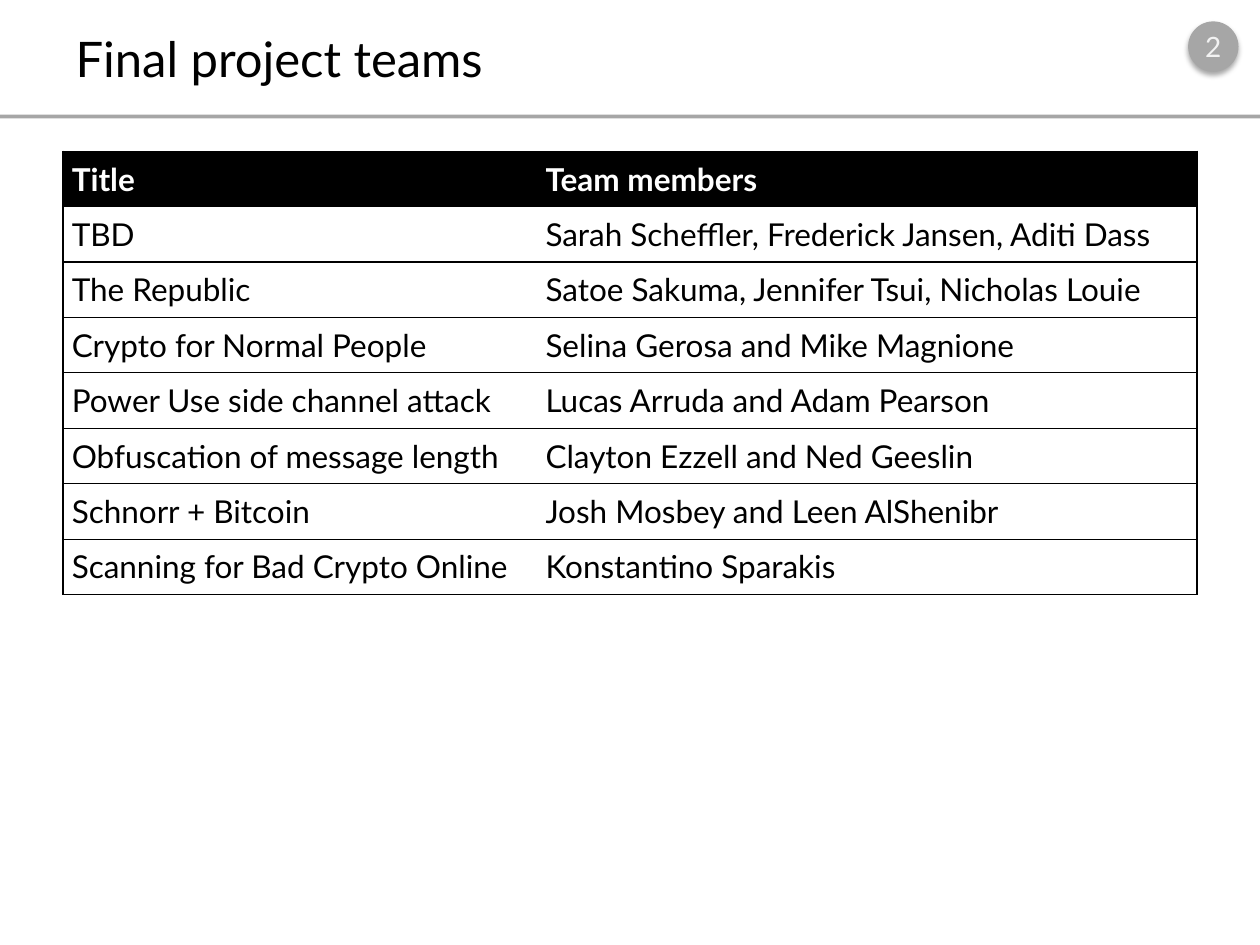
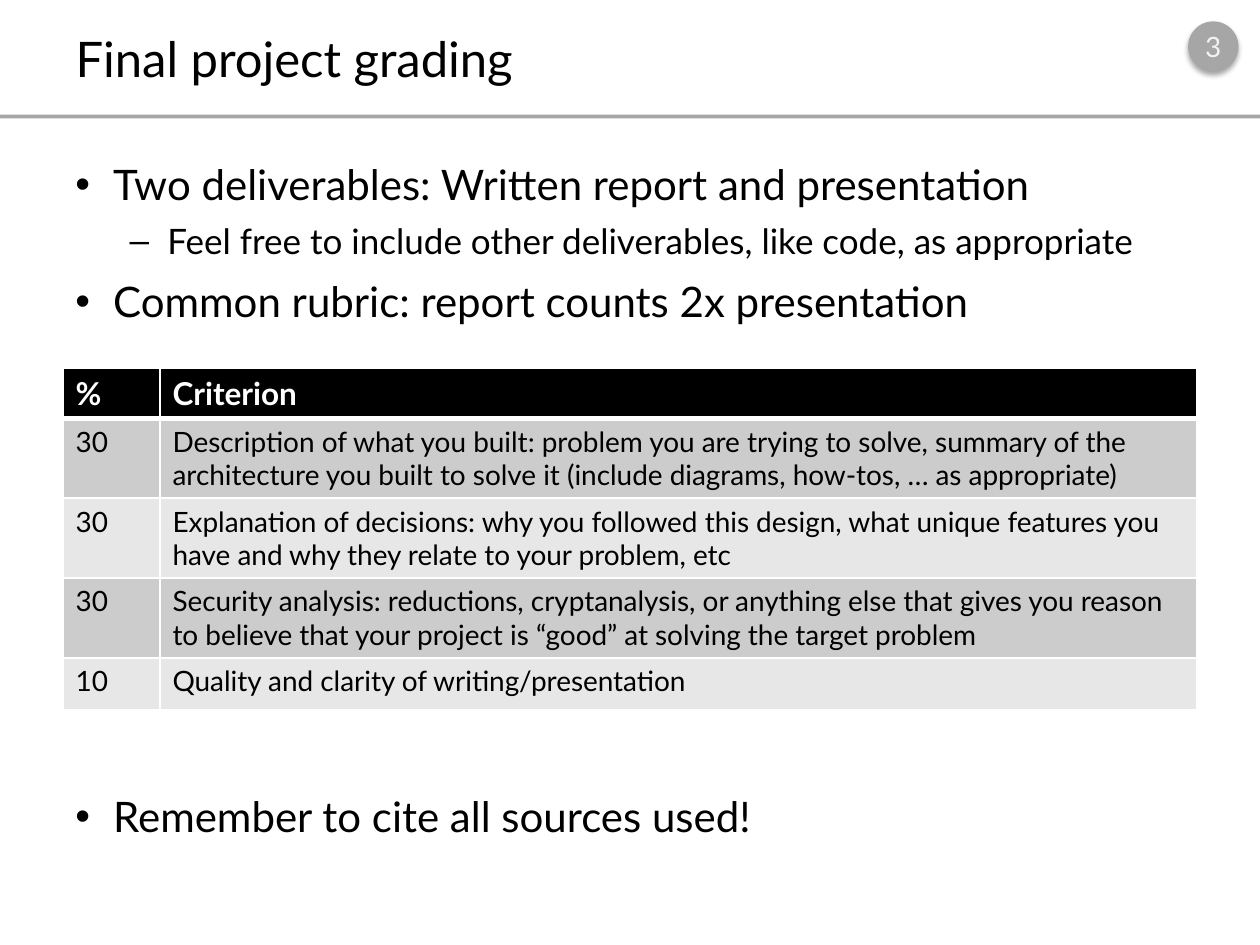
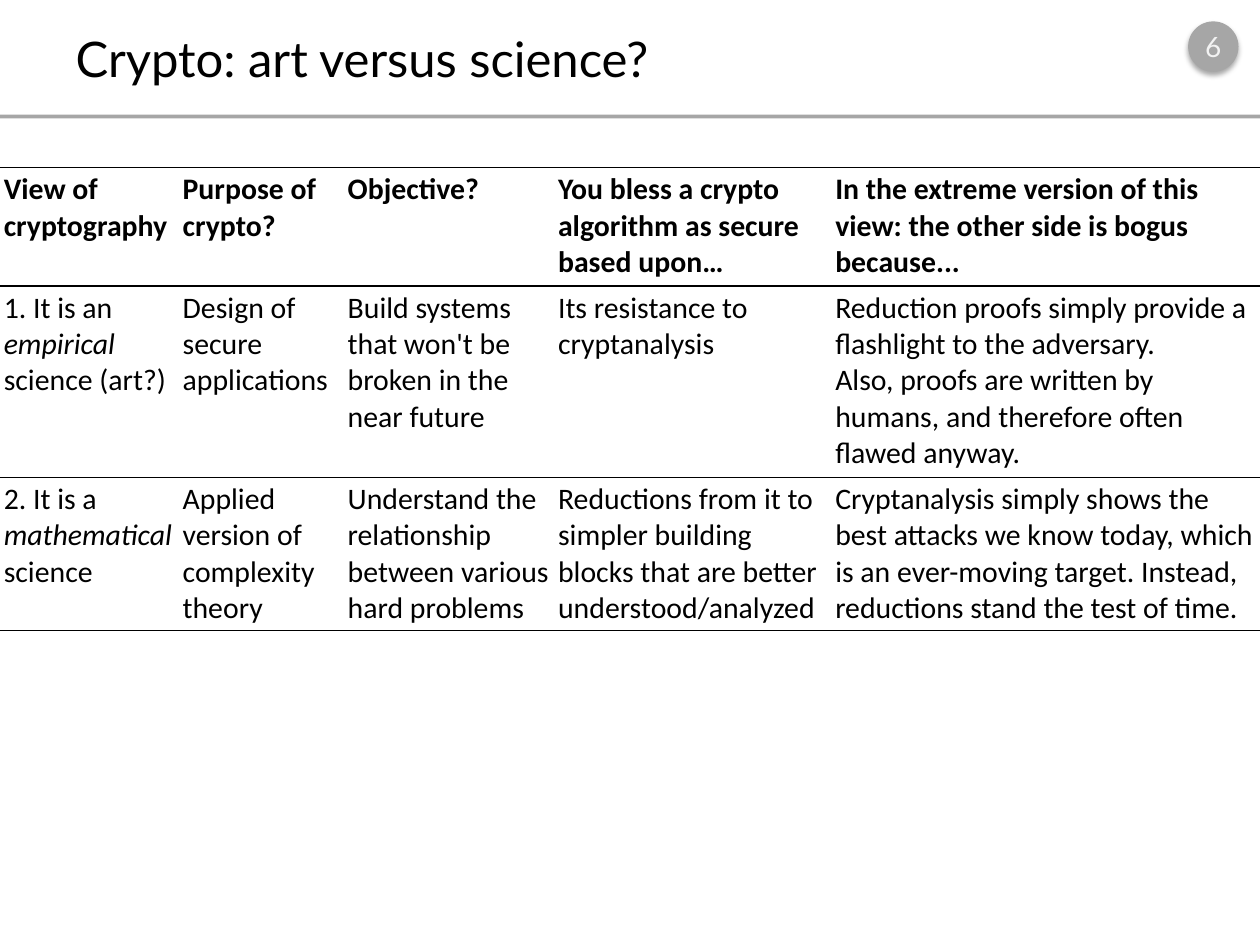
from lxml import etree
from pptx import Presentation
from pptx.dml.color import RGBColor
from pptx.enum.shapes import MSO_SHAPE as SHAPE
from pptx.enum.text import MSO_ANCHOR as ANCHOR, MSO_AUTO_SIZE as AUTO, PP_ALIGN as ALIGN
from pptx.oxml.ns import qn
from pptx.util import Emu, Pt

PX = 9144
BLACK = RGBColor(0x00, 0x00, 0x00)
WHITE = RGBColor(0xFF, 0xFF, 0xFF)
GRAY = RGBColor(0xA6, 0xA6, 0xA6)
PALE = RGBColor(0xF2, 0xF2, 0xF2)
BAND_DARK = RGBColor(0xCC, 0xCC, 0xCC)
BAND_LIGHT = RGBColor(0xE7, 0xE7, 0xE7)
LATO = "Lato"
CALIBRI = "Calibri"
TITLE_ONLY = 5
NO_STYLE = "{2D5ABB26-0587-4C30-8999-92F81FD0307C}"
BULLETS = (("•", 30, 24, 8), ("–", 73, 20, 6))


def px(n):
    return Emu(n * PX)


def sub(parent, tag, **attrs):
    return etree.SubElement(parent, qn(tag), {k: str(v) for k, v in attrs.items()})


def set_insets(target, x, y):
    target.margin_left = target.margin_right = px(x)
    target.margin_top = target.margin_bottom = px(y)


def write(p, text, font=LATO, size=18, color=BLACK, bold=False, align=ALIGN.LEFT):
    p.alignment = align
    for i, part in enumerate(text.split("*")):
        if part:
            r = p.add_run()
            r.text = part
            f = r.font
            f.name, f.size, f.bold, f.italic = font, Pt(size), bold, i % 2 == 1
            f.color.rgb = color


def draw_border(cell, side, color, width):
    ln = sub(cell._tc.get_or_add_tcPr(), f"a:ln{side}", w=Pt(width))
    sub(sub(ln, "a:solidFill"), "a:srgbClr", val=color)
    sub(ln, "a:prstDash", val="solid")


class Deck:
    def __init__(self):
        self.prs = Presentation()
        self.prs.slide_width, self.prs.slide_height = px(1000), px(750)
        self.s = None

    def slide(self, title, number):
        self.s = self.prs.slides.add_slide(self.prs.slide_layouts[TITLE_ONLY])
        self.shape(SHAPE.RECTANGLE, 0, 91, 1000, 3, GRAY)
        self.badge(number)
        sp = self.s.shapes.title
        sp.left, sp.top, sp.width, sp.height = px(50), px(16), px(900), px(60)
        tf = sp.text_frame
        tf.auto_size, tf.vertical_anchor = AUTO.NONE, ANCHOR.MIDDLE
        write(tf.paragraphs[0], title, size=28)

    def shape(self, kind, x, y, w, h, fill):
        sp = self.s.shapes.add_shape(kind, px(x), px(y), px(w), px(h))
        sp.shadow.inherit = False
        sp.fill.solid()
        sp.fill.fore_color.rgb = fill
        sp.line.fill.background()
        return sp

    def badge(self, number):
        sp = self.shape(SHAPE.OVAL, 943, 17, 40, 40, GRAY)
        effects = sp.element.spPr.find(qn("a:effectLst"))
        shadow = sub(effects, "a:outerShdw", blurRad=Pt(3.1), dist=Pt(1.8),
                     dir=5400000, rotWithShape=0)
        sub(sub(shadow, "a:srgbClr", val=BLACK), "a:alpha", val=35000)
        tf = sp.text_frame
        tf.vertical_anchor = ANCHOR.MIDDLE
        set_insets(tf, 0, 5)
        write(tf.paragraphs[0], str(number), size=16, color=PALE, align=ALIGN.CENTER)

    def bullets(self, x, y, w, h, items):
        tf = self.s.shapes.add_textbox(px(x), px(y), px(w), px(h)).text_frame
        tf.word_wrap = True
        for i, (level, text, extra) in enumerate(items):
            p = tf.add_paragraph() if i else tf.paragraphs[0]
            mark, indent, size, before = BULLETS[level]
            p.level = level
            p.space_before = Pt(before + extra)
            write(p, text, size=size)
            pPr = p._p.get_or_add_pPr()
            pPr.set("marL", str(px(indent)))
            pPr.set("indent", str(px(-30)))
            sub(pPr, "a:buFont", typeface="Arial")
            sub(pPr, "a:buChar", char=mark)

    def table(self, x, y, cols, heights, rows, borders, fills, inset=(10, 5),
              font=LATO, head_size=18, size=18, head_color=WHITE):
        frame = self.s.shapes.add_table(len(rows), len(cols), px(x), px(y),
                                        px(sum(cols)), px(sum(heights)))
        tbl = frame.table
        tbl.first_row = tbl.horz_banding = False
        tbl._tbl.tblPr.find(qn("a:tableStyleId")).text = NO_STYLE
        for col, width in zip(tbl.columns, cols):
            col.width = px(width)
        for r, (row, height, fill) in enumerate(zip(rows, heights, fills)):
            tbl.rows[r].height = px(height)
            head = r == 0
            for c, text in enumerate(row):
                cell = tbl.cell(r, c)
                set_insets(cell, *inset)
                lines = borders(r, c)
                for side in "LRTB":
                    if side in lines:
                        draw_border(cell, side, *lines[side])
                if fill is None:
                    cell.fill.background()
                else:
                    cell.fill.solid()
                    cell.fill.fore_color.rgb = fill
                tf = cell.text_frame
                for i, line in enumerate(text.split("\n")):
                    p = tf.add_paragraph() if i else tf.paragraphs[0]
                    write(p, line, font=font, size=head_size if head else size,
                          color=head_color if head else BLACK, bold=head)


def team_borders(r, c):
    line = (BLACK, 0.75)
    return {"L" if c == 0 else "R": line, "T": line, "B": line}


def rubric_borders(r, c):
    thin, thick = (WHITE, 1), (WHITE, 3)
    return {"L": thin, "R": thin, "T": thick if r == 1 else thin,
            "B": thick if r == 0 else thin}


def view_borders(r, c):
    line = (BLACK, 1)
    return ({"T": line, "B": line}, {"T": line}, {"B": line})[r]


TEAMS = [
    ("Title", "Team members"),
    ("TBD", "Sarah Scheffler, Frederick Jansen, Aditi Dass"),
    ("The Republic", "Satoe Sakuma, Jennifer Tsui, Nicholas Louie"),
    ("Crypto for Normal People", "Selina Gerosa and Mike Magnione"),
    ("Power Use side channel attack", "Lucas Arruda and Adam Pearson"),
    ("Obfuscation of message length", "Clayton Ezzell and Ned Geeslin"),
    ("Schnorr + Bitcoin", "Josh Mosbey and Leen AlShenibr"),
    ("Scanning for Bad Crypto Online", "Konstantino Sparakis"),
]

DELIVERABLES = [
    (0, "Two deliverables: Written report and presentation", 0),
    (1, "Feel free to include other deliverables, like code, as appropriate", 0),
    (0, "Common rubric: report counts 2x presentation", 0),
    (0, "Remember to cite all sources used!", 257.6),
]

RUBRIC = [
    ("%", "Criterion"),
    ("30", "Description of what you built: problem you are trying to solve, summary of the "
           "architecture you built to solve it (include diagrams, how-tos, … as appropriate)"),
    ("30", "Explanation of decisions: why you followed this design, what unique features you "
           "have and why they relate to your problem, etc"),
    ("30", "Security analysis: reductions, cryptanalysis, or anything else that gives you reason "
           "to believe that your project is “good” at solving the target problem"),
    ("10", "Quality and clarity of writing/presentation"),
]

VIEWS = [
    ("View of cryptography", "Purpose of crypto?", "Objective?",
     "You bless a crypto algorithm as secure based upon…",
     "In the extreme version of this view: the other side is bogus because..."),
    ("1. It is an *empirical *science (art?)", "Design of secure applications",
     "Build systems that won't be broken in the near future",
     "Its resistance to cryptanalysis",
     "Reduction proofs simply provide a flashlight to the adversary.\n"
     "Also, proofs are written by humans, and therefore often flawed anyway."),
    ("2. It is a *mathematical *science", "Applied version of complexity theory",
     "Understand the relationship between various hard problems",
     "Reductions from it to simpler building blocks that are better understood/analyzed",
     "Cryptanalysis simply shows the best attacks we know today, which is an ever-moving "
     "target. Instead, reductions stand the test of time."),
]


def main():
    deck = Deck()

    deck.slide("Final project teams", 2)
    deck.table(50, 120, (376, 524), [44] * len(TEAMS), TEAMS, team_borders,
               [BLACK] + [None] * (len(TEAMS) - 1), inset=(7, 7))

    deck.slide("Final project grading", 3)
    deck.bullets(50, 121, 900, 575, DELIVERABLES)
    deck.table(50, 292, (77, 823), (40, 63, 63, 63, 41), RUBRIC, rubric_borders,
               [BLACK] + [BAND_DARK, BAND_LIGHT] * 2, size=16)

    deck.slide("Crypto: art versus science?", 6)
    deck.table(0, 133, (142, 131, 167, 220, 340), (94, 152, 115), VIEWS, view_borders,
               [None] * len(VIEWS), inset=(3, 3), font=CALIBRI, head_size=17, size=17,
               head_color=BLACK)

    deck.prs.save("out.pptx")


if __name__ == "__main__":
    main()
